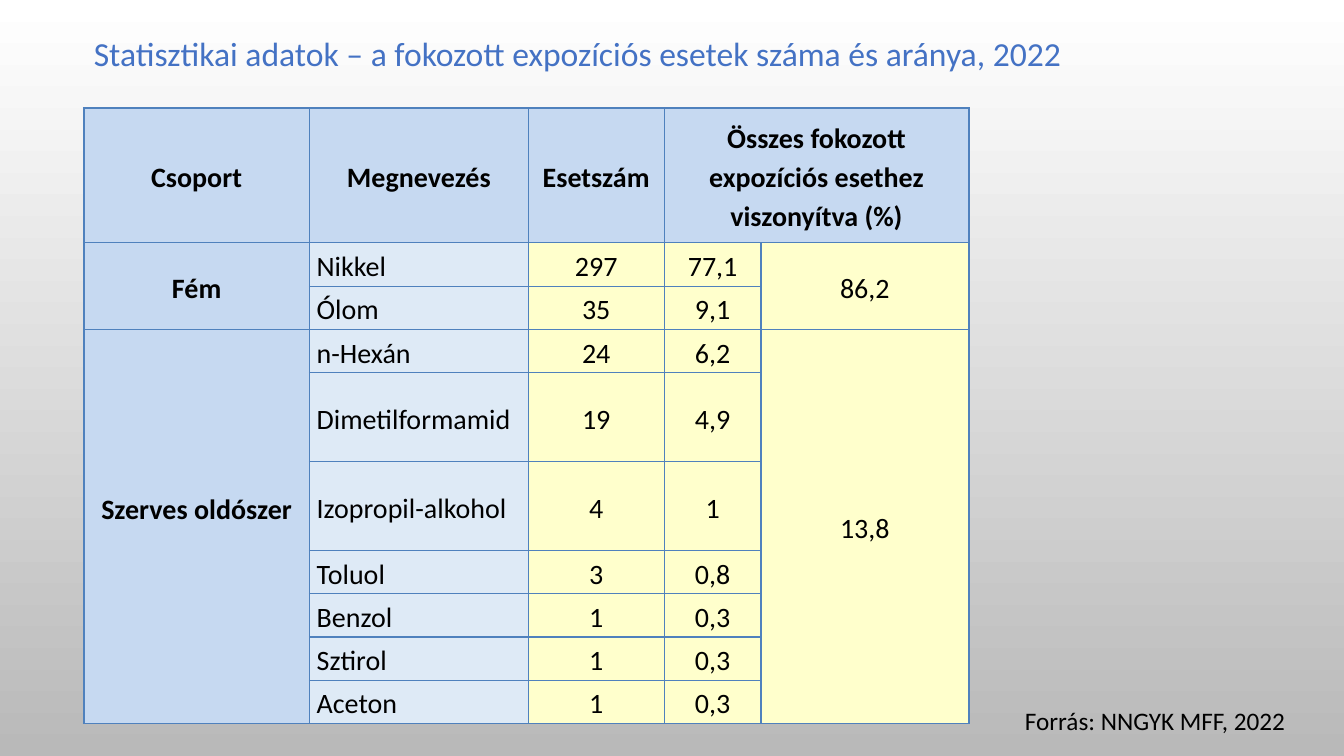
from lxml import etree
from pptx import Presentation
from pptx.dml.color import RGBColor
from pptx.enum import text
from pptx.oxml import ns
from pptx.util import Cm, Pt

COLUMN_WIDTHS = [5.69, 5.51, 3.43, 2.44, 5.23]
ROW_HEIGHTS = [3.4] + [1.09] * 3 + [2.24] * 2 + [1.09] * 4
HEADINGS = ["Csoport", "Megnevezés", "Esetszám",
            "Összes fokozott expozíciós esethez viszonyítva (%)"]
# Group, its total share, then name, number of cases and share
GROUPS = [
    ("Fém", "86,2", [("Nikkel", "297", "77,1"), ("Ólom", "35", "9,1")]),
    ("Szerves oldószer", "13,8", [
        ("n-Hexán", "24", "6,2"), ("Dimetilformamid", "19", "4,9"),
        ("Izopropil-alkohol", "4", "1"), ("Toluol", "3", "0,8"),
        ("Benzol", "1", "0,3"), ("Sztirol", "1", "0,3"),
        ("Aceton", "1", "0,3")]),
]


def colour(value):
    return RGBColor.from_string(value)


def apply(target, values):
    for name, value in values.items():
        setattr(target, name, value)


class SlideBuilder:
    FONT = "Calibri"
    TITLE, INK, BORDER = "4472C4", "000000", "4F81BD"
    HEAD, NAME, VALUE = "C6D9F1", "DEEAF6", "FFFFCC"

    def __init__(self, presentation):
        self.slide = presentation.slides.add_slide(presentation.slide_layouts[5])

    def background(self, *colours):
        fill = self.slide.background.fill
        fill.gradient()
        fill.gradient_angle = 270
        for stop, value in zip(fill.gradient_stops, colours):
            stop.color.rgb = colour(value)

    def set_text(self, frame, words, size, ink=INK, bold=False, centred=False, spacing=1.0):
        paragraph = frame.paragraphs[0]
        paragraph.text = words
        align = text.PP_ALIGN.CENTER if centred else text.PP_ALIGN.LEFT
        apply(paragraph, {"alignment": align, "line_spacing": spacing})
        font = paragraph.runs[0].font
        apply(font, {"name": self.FONT, "size": Pt(size), "bold": bold})
        font.color.rgb = colour(ink)

    def place(self, shape, left, top, width, height):
        apply(shape, {"left": Cm(left), "top": Cm(top),
                      "width": Cm(width), "height": Cm(height)})

    def title(self, words, *box):
        shape = self.slide.shapes.title
        self.place(shape, *box)
        apply(shape.text_frame, {"vertical_anchor": text.MSO_ANCHOR.TOP, "word_wrap": True,
                                 "auto_size": text.MSO_AUTO_SIZE.SHAPE_TO_FIT_TEXT})
        self.set_text(shape.text_frame, words, 24, self.TITLE)

    def label(self, words, *box):
        shape = self.slide.shapes.add_textbox(*map(Cm, box))
        apply(shape.text_frame, {"word_wrap": False,
                                 "auto_size": text.MSO_AUTO_SIZE.SHAPE_TO_FIT_TEXT})
        self.set_text(shape.text_frame, words, 18)

    def table(self, left, top, widths, heights):
        frame = self.slide.shapes.add_table(
            len(heights), len(widths), Cm(left), Cm(top), Cm(sum(widths)), Cm(sum(heights)))
        self.grid = frame.table
        apply(self.grid, {"first_row": False, "horz_banding": False})
        for column, width in zip(self.grid.columns, widths):
            column.width = Cm(width)
        for row, height in zip(self.grid.rows, heights):
            row.height = Cm(height)

    def cell(self, row, column, words, fill, bold=False, centred=True, span=(1, 1), bottom=0):
        cell = self.grid.cell(row, column)
        end_row, end_column = row + span[0], column + span[1]
        if span != (1, 1):
            cell.merge(self.grid.cell(end_row - 1, end_column - 1))
        apply(cell, {"margin_left": Cm(0.18), "margin_right": Cm(0.18), "margin_top": 0,
                     "margin_bottom": Cm(bottom), "vertical_anchor": text.MSO_ANCHOR.MIDDLE})
        # Outer edges of the table are heavier than inner ones
        self.borders(cell, {"L": column == 0, "R": end_column == len(self.grid.columns),
                            "T": row == 0, "B": end_row == len(self.grid.rows)})
        cell.fill.solid()
        cell.fill.fore_color.rgb = colour(fill)
        self.set_text(cell.text_frame, words, 20, bold=bold, centred=centred, spacing=1.15)

    def borders(self, cell, outer_sides):
        properties = cell._tc.get_or_add_tcPr()
        for side, outer in outer_sides.items():
            width = Pt(1.5 if outer else 1)
            line = etree.SubElement(properties, ns.qn(f"a:ln{side}"), w=str(int(width)))
            fill = etree.SubElement(line, ns.qn("a:solidFill"))
            etree.SubElement(fill, ns.qn("a:srgbClr"), val=self.BORDER)


def main():
    presentation = Presentation()
    apply(presentation, {"slide_width": Cm(33.87), "slide_height": Cm(19.05)})
    page = SlideBuilder(presentation)
    page.background("FFFFFF", "B9B9B9")
    page.title("Statisztikai adatok – a fokozott expozíciós esetek száma és aránya, 2022",
               2.11, 0.69, 30.81, 1.27)

    # Table headings
    page.table(2.11, 2.72, COLUMN_WIDTHS, ROW_HEIGHTS)
    for column, heading in enumerate(HEADINGS):
        span = (1, 2) if column == 3 else (1, 1)
        page.cell(0, column, heading, page.HEAD, bold=True, span=span)

    # Groups and their substances
    row = 1
    for group, total, substances in GROUPS:
        span = (len(substances), 1)
        lift = 0.97 if len(substances) > 2 else 0
        page.cell(row, 0, group, page.HEAD, bold=True, span=span, bottom=lift)
        page.cell(row, 4, total, page.VALUE, span=span)
        for name, cases, share in substances:
            page.cell(row, 1, name, page.NAME, centred=False)
            page.cell(row, 2, cases, page.VALUE)
            page.cell(row, 3, share, page.VALUE)
            row += 1

    # Source note
    page.label("Forrás: NNGYK MFF, 2022", 25.58, 17.65, 7.37, 1.02)
    presentation.save("out.pptx")


if __name__ == "__main__":
    main()
